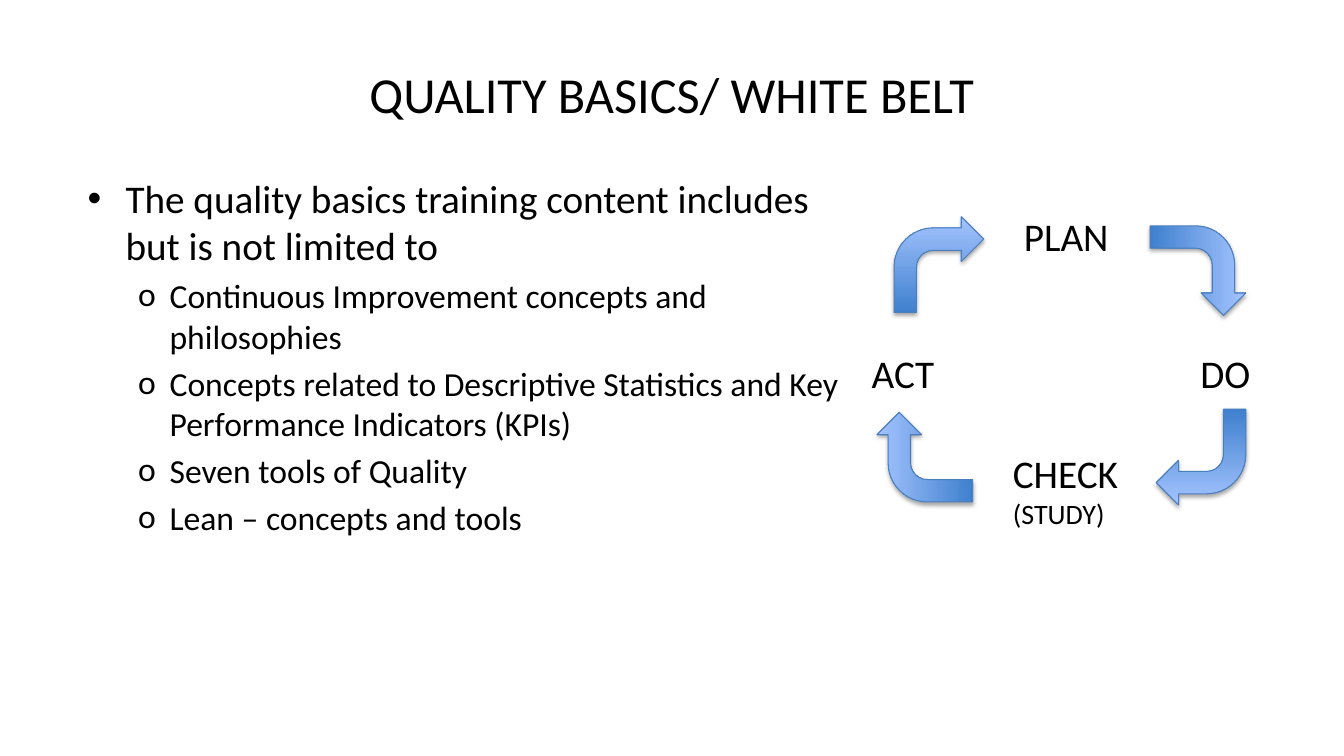
from lxml import etree
from pptx import Presentation
from pptx.dml.color import RGBColor
from pptx.enum.shapes import MSO_SHAPE
from pptx.enum.text import MSO_ANCHOR, MSO_AUTO_SIZE, PP_ALIGN
from pptx.oxml.ns import qn
from pptx.util import Pt

BENT_ARROW = MSO_SHAPE.BENT_ARROW
MIDDLE, TOP = MSO_ANCHOR.MIDDLE, MSO_ANCHOR.TOP
NO_FIT, GROW = MSO_AUTO_SIZE.NONE, MSO_AUTO_SIZE.SHAPE_TO_FIT_TEXT
CENTER, LEFT = PP_ALIGN.CENTER, PP_ALIGN.LEFT


def color(hex_string):
    return RGBColor.from_string(hex_string)


def write(paragraph, text, size, align=LEFT):
    paragraph.text = text
    paragraph.alignment = align
    font_format = {"name": "Calibri", "size": Pt(size), "bold": False}
    for name, value in font_format.items():
        setattr(paragraph.font, name, value)
    paragraph.font.color.rgb = color("000000")


presentation = Presentation()
presentation.slide_width = Pt(960)
presentation.slide_height = Pt(540)
slide = presentation.slides.add_slide(presentation.slide_layouts[1])
title, body = slide.placeholders

# Title and body frames
frames = [
    (title, (48, 21.6, 864, 90), MIDDLE),
    (body, (55.44, 120.96, 560.16, 356.4), TOP),
]
for shape, bounds, anchor in frames:
    for name, value in zip(("left", "top", "width", "height"), bounds):
        setattr(shape, name, Pt(value))
    shape.text_frame.auto_size = NO_FIT
    shape.text_frame.vertical_anchor = anchor
write(title.text_frame.paragraphs[0], "QUALITY BASICS/ WHITE BELT", 36, CENTER)

# Training content list: level, text
levels = [
    {"size": 28, "indent": 27, "hang": 27, "bullet": "•", "font": "Arial", "before": 0},
    {"size": 24, "indent": 58.5, "hang": 22.5, "bullet": "o", "font": "Calibri", "before": 4.8},
]
items = [
    (0, "The quality basics training content includes but is not limited to"),
    (1, "Continuous Improvement concepts and philosophies"),
    (1, "Concepts related to Descriptive Statistics and Key Performance Indicators (KPIs)"),
    (1, "Seven tools of Quality"),
    (1, "Lean – concepts and tools"),
]
for index, (level, text) in enumerate(items):
    style = levels[level]
    frame = body.text_frame
    paragraph = frame.add_paragraph() if index else frame.paragraphs[0]
    paragraph.level = level
    properties = paragraph._p.get_or_add_pPr()
    properties.set("marL", str(Pt(style["indent"])))
    properties.set("indent", str(-Pt(style["hang"])))
    etree.SubElement(properties, qn("a:buFont"), typeface=style["font"])
    etree.SubElement(properties, qn("a:buChar"), char=style["bullet"])
    write(paragraph, text, style["size"])
    paragraph.space_before = Pt(style["before"])

# Cycle arrows: left, top, rotation
arrows = [
    (638.64, 154.8, 0),
    (823.68, 159.12, 90),
    (825.84, 292.32, 180),
    (628.56, 292.32, 270),
]
for left, top, rotation in arrows:
    arrow = slide.shapes.add_shape(BENT_ARROW, Pt(left), Pt(top), Pt(64), Pt(68.4))
    arrow.rotation = rotation
    arrow.fill.gradient()
    arrow.fill.gradient_angle = 90
    for stop, position, tint in zip(arrow.fill.gradient_stops, (0, 1), ("3F80CE", "A4C4FF")):
        stop.position = position
        stop.color.rgb = color(tint)
    arrow.line.color.rgb = color("4B7EBC")
    arrow.line.width = Pt(0.75)
    arrow.shadow.inherit = False
    effects = arrow.element.spPr.find(qn("a:effectLst"))
    shadow = etree.SubElement(effects, qn("a:outerShdw"), blurRad=str(Pt(3.1)),
                              dist=str(Pt(1.8)), dir="5400000", rotWithShape="0")
    shadow_color = etree.SubElement(shadow, qn("a:srgbClr"), val="000000")
    etree.SubElement(shadow_color, qn("a:alpha"), val="35000")

# Cycle labels: left, top, width, height, wrap, lines with sizes
labels = [
    (724.32, 148.32, 75.6, 41.04, False, [("PLAN", 28)]),
    (850.32, 246.24, 66.24, 41.04, True, [("DO", 28)]),
    (716.4, 317.52, 102.24, 65.52, True, [("CHECK", 28), ("(STUDY)", 20)]),
    (615.6, 246.24, 59.76, 41.04, False, [("ACT", 28)]),
]
for left, top, width, height, wrap, lines in labels:
    label = slide.shapes.add_textbox(Pt(left), Pt(top), Pt(width), Pt(height))
    frame = label.text_frame
    frame.word_wrap = wrap
    frame.auto_size = GROW
    for index, (text, size) in enumerate(lines):
        paragraph = frame.add_paragraph() if index else frame.paragraphs[0]
        write(paragraph, text, size)

presentation.save("out.pptx")
